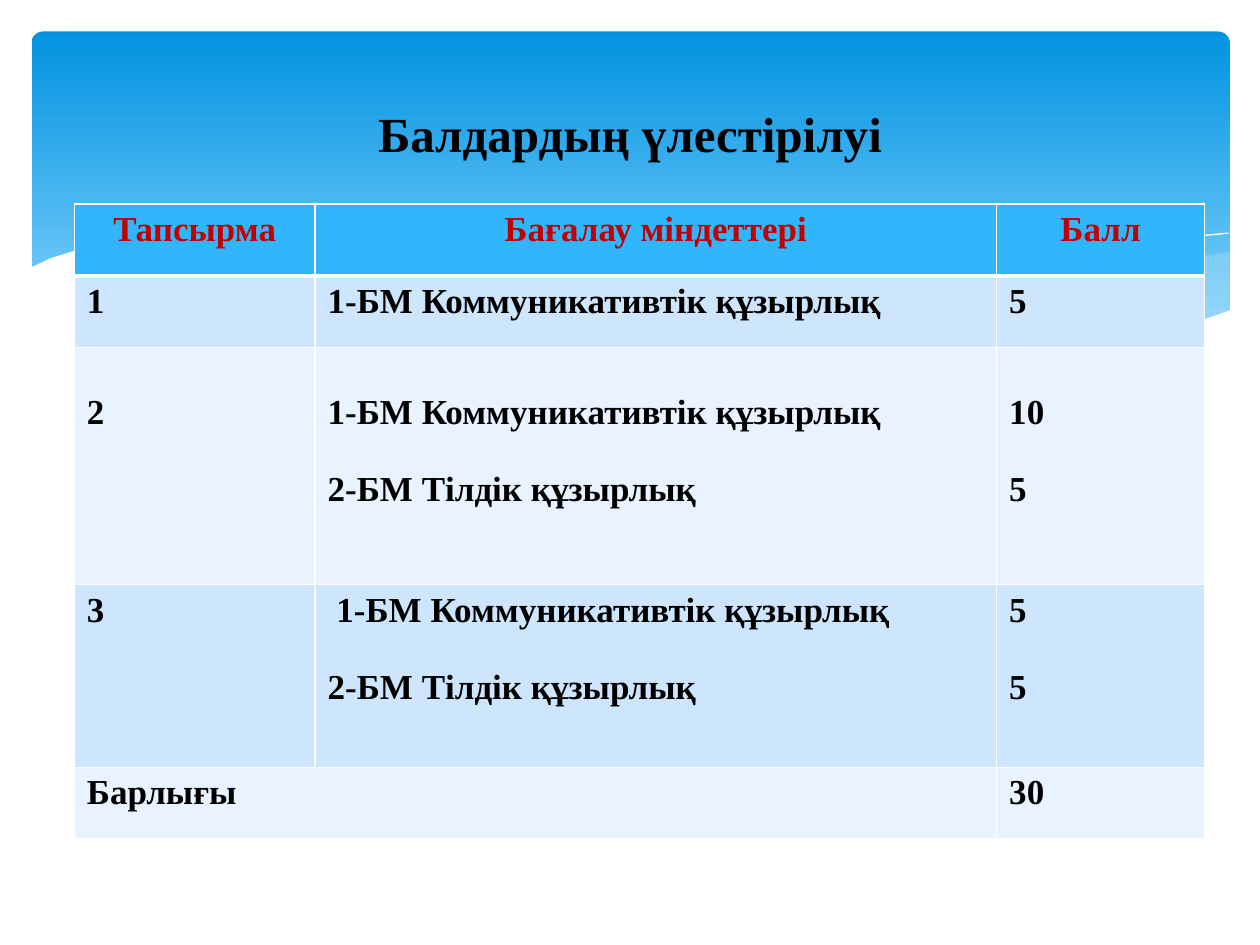
from lxml.etree import SubElement
from pptx import Presentation
from pptx.dml.color import RGBColor
from pptx.enum.shapes import MSO_SHAPE
from pptx.enum.text import MSO_ANCHOR, PP_ALIGN
from pptx.oxml.ns import qn
from pptx.util import Inches, Pt

BLACK = RGBColor(0x00, 0x00, 0x00)
WHITE = RGBColor(0xFF, 0xFF, 0xFF)
RED = RGBColor(0xC0, 0x00, 0x00)
BAND_TOP = RGBColor(0x02, 0x93, 0xE0)
BAND_BOTTOM = RGBColor(0x83, 0xD3, 0xFE)
WAVE = RGBColor(0xC6, 0xE7, 0xFC)
HEADER = RGBColor(0x31, 0xB6, 0xFD)
ODD_ROW = RGBColor(0xCE, 0xE5, 0xFE)
EVEN_ROW = RGBColor(0xE8, 0xF3, 0xFF)

presentation = Presentation()
presentation.slide_width, presentation.slide_height = Inches(10), Inches(7.5)
slide = presentation.slides.add_slide(presentation.slide_layouts[6])

# The slide is a grid of 10 columns by 7.5 rows with square cells
CELL = presentation.slide_width // 10


def grid(*lengths):
    return [round(length * CELL) for length in lengths]


def write(paragraph, text, size, color, alignment):
    paragraph.alignment = alignment
    run = paragraph.add_run()
    run.text = text
    font_format = {"name": "Times New Roman", "size": Pt(size), "bold": True}
    for name, value in font_format.items():
        setattr(run.font, name, value)
    run.font.color.rgb = color


# Gradient band
band = slide.shapes.add_shape(MSO_SHAPE.ROUNDED_RECTANGLE, *grid(0.25, 0.25, 9.51, 2.7))
band.adjustments[0] = 0.034
band.shadow.inherit = False
band.line.fill.background()
band.fill.gradient()
band.fill.gradient_angle = 270
for stop, position, color in zip(band.fill.gradient_stops, (0, 0.9), (BAND_TOP, BAND_BOTTOM)):
    stop.position = position
    stop.color.rgb = color

# Waves: points in hundredths of a cell, fill colour (None for a line), opacity in percent
waves = [
    ([(976, 200), (948, 204), (906, 213), (861, 223), (805, 237), (753, 248), (706, 257),
      (661, 265), (705, 271), (757, 276), (803, 278), (854, 276), (897, 270), (935, 262),
      (963, 252), (976, 247)], WAVE, 29),
    ([(893, 273), (837, 265), (775, 254), (706, 240), (629, 222), (569, 208), (514, 198),
      (465, 191), (420, 187), (361, 185), (313, 188), (286, 191), (342, 199), (404, 211),
      (449, 222), (530, 240), (601, 255), (665, 266), (722, 274), (773, 277), (818, 278),
      (867, 276)], WAVE, 40),
    ([(309, 195), (344, 190), (401, 187), (469, 189), (533, 194), (608, 204), (665, 213),
      (727, 226), (795, 241), (869, 261), (907, 272)], None, 100),
    ([(613, 257), (672, 241), (748, 223), (806, 210), (866, 199), (924, 190), (975, 185)],
     None, 100),
    ([(977, 246), (940, 259), (899, 269), (850, 275), (809, 277), (761, 275), (708, 270),
      (648, 262), (579, 250), (503, 233), (447, 220), (391, 207), (340, 197), (292, 190),
      (250, 186), (211, 184), (161, 184), (119, 187), (85, 193), (59, 199), (40, 205),
      (23, 213), (23, 329), (977, 329)], WHITE, 100),
]
for points, color, opacity in waves:
    builder = slide.shapes.build_freeform(*points[0], scale=CELL / 100)
    builder.add_line_segments(points[1:], close=color is not None)
    wave = builder.convert_to_shape()
    wave.shadow.inherit = False
    if color is None:
        wave.fill.background()
        wave.line.color.rgb = WHITE
        wave.line.width = Pt(0)
        continue
    wave.line.fill.background()
    wave.fill.solid()
    wave.fill.fore_color.rgb = color
    if opacity < 100:
        color_element = wave.fill._xPr.find(qn("a:solidFill"))[0]
        SubElement(color_element, qn("a:alpha"), val=str(opacity * 1000))

# Title
title = slide.shapes.add_textbox(*grid(0.5, 0.37, 9, 1.37)).text_frame
title.word_wrap = True
title.vertical_anchor = MSO_ANCHOR.MIDDLE
write(title.paragraphs[0], "Балдардың үлестірілуі", 28, BLACK, PP_ALIGN.CENTER)

# Score table: each cell is a list of lines
COMMUNICATION = "1-БМ Коммуникативтік құзырлық"
LANGUAGE = "2-БМ Тілдік құзырлық"
scores = [
    [["Тапсырма"], ["Бағалау міндеттері"], ["Балл"]],
    [["1"], [COMMUNICATION], ["5"]],
    [["2"], [COMMUNICATION, LANGUAGE], ["10", "5"]],
    [["3"], [" " + COMMUNICATION, LANGUAGE], ["5", "5"]],
    [["Барлығы"], [], ["30"]],
]
column_widths = grid(1.91, 5.41, 1.65)
row_heights = grid(0.57, 0.57, 1.88, 1.45, 0.57)
top_margins = grid(0.05, 0.05, 0.36, 0.05, 0.05)

table = slide.shapes.add_table(
    len(scores), len(column_widths), *grid(0.59, 1.62), sum(column_widths), sum(row_heights)
).table
for column, width in zip(table.columns, column_widths):
    column.width = width
for row, height in zip(table.rows, row_heights):
    row.height = height
table.cell(4, 0).merge(table.cell(4, 1))

for row_index, row_texts in enumerate(scores):
    is_header = row_index == 0
    fill_color = HEADER if is_header else (EVEN_ROW, ODD_ROW)[row_index % 2]
    text_color = RED if is_header else BLACK
    alignment = PP_ALIGN.CENTER if is_header else PP_ALIGN.LEFT
    # A thicker rule parts the header from the body
    border_widths = {"lnL": 1, "lnR": 1, "lnT": 3 if row_index == 1 else 1,
                     "lnB": 3 if is_header else 1}
    for column_index, lines in enumerate(row_texts):
        cell = table.cell(row_index, column_index)
        cell.margin_top = top_margins[row_index]
        properties = cell._tc.get_or_add_tcPr()
        for side, width in border_widths.items():
            border = SubElement(properties, qn(f"a:{side}"), w=str(Pt(width)))
            border_fill = SubElement(border, qn("a:solidFill"))
            SubElement(border_fill, qn("a:srgbClr"), val=str(WHITE))
        cell.fill.solid()
        cell.fill.fore_color.rgb = fill_color
        for line_index, line in enumerate(lines):
            frame = cell.text_frame
            paragraph = frame.add_paragraph() if line_index else frame.paragraphs[0]
            paragraph.space_before = Pt(22 if line_index else 0)
            write(paragraph, line, 20, text_color, alignment)

presentation.save("out.pptx")
